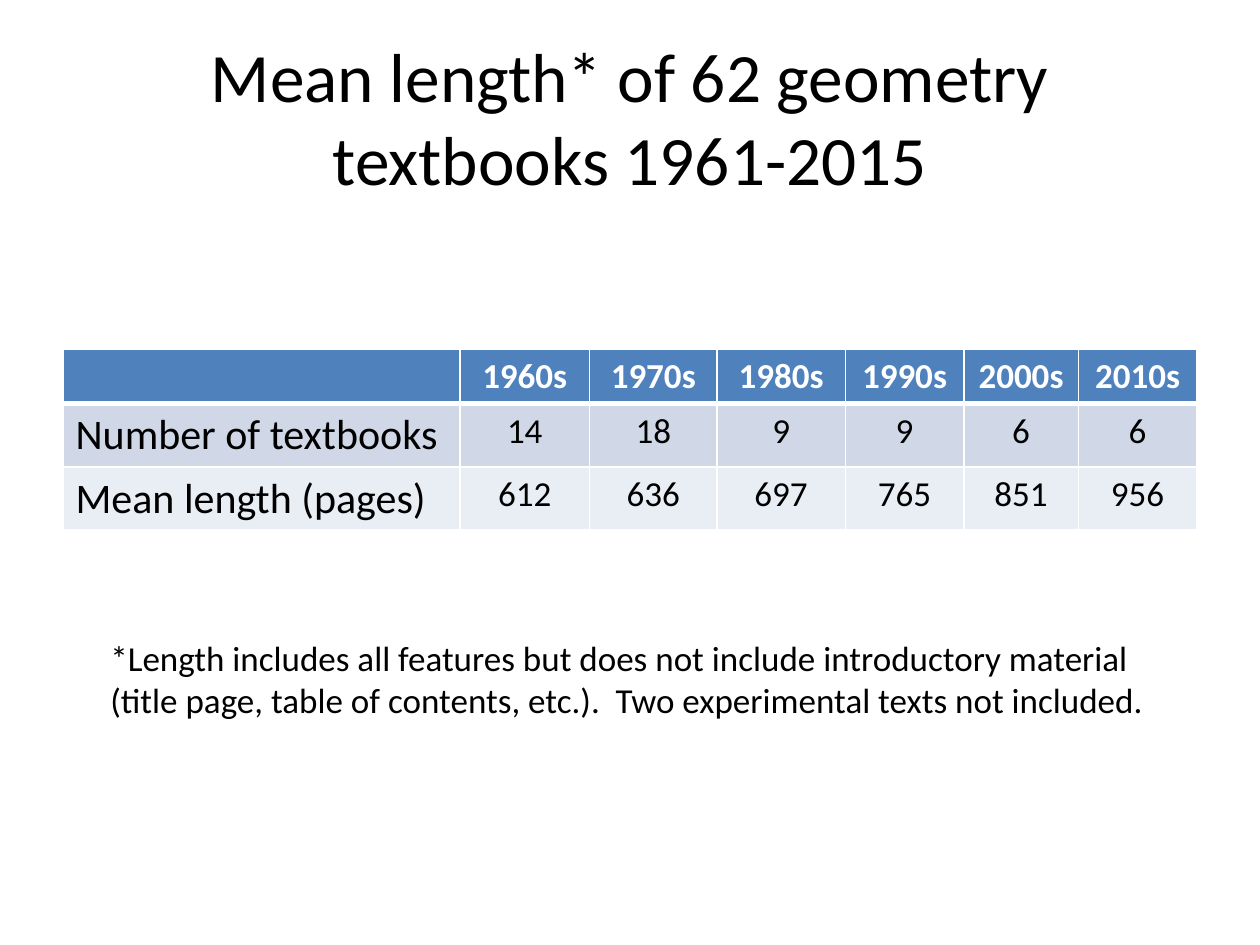
from lxml.etree import SubElement
from pptx import Presentation
from pptx.dml.color import RGBColor
from pptx.enum.text import MSO_ANCHOR as Anchor, PP_ALIGN as Align
from pptx.oxml.ns import qn
from pptx.util import Pt

FONT = "Calibri"
BLACK, WHITE = "000000", "FFFFFF"
ROW_FILLS = ["4F81BD", "D0D8E8", "E9EDF4"]
ROW_HEIGHTS = [31, 36, 36]
COLUMN_WIDTHS = [226.8, 74.2, 72.7, 73.4, 67.7, 65.5, 67.7]
TEXTBOOK_ROWS = [
    ["", "1960s", "1970s", "1980s", "1990s", "2000s", "2010s"],
    ["Number of textbooks", "14", "18", "9", "9", "6", "6"],
    ["Mean length (pages)", "612", "636", "697", "765", "851", "956"],
]


def color(hex_string):
    """Return the colour for a hex string."""
    return RGBColor.from_string(hex_string)


def write_text(text_frame, text, size=20, hex_color=BLACK, bold=False, align=Align.LEFT):
    """Write one formatted paragraph into a text frame."""
    paragraph = text_frame.paragraphs[0]
    paragraph.alignment = align
    run = paragraph.add_run()
    run.text = text
    run.font.name = FONT
    run.font.size = Pt(size)
    run.font.bold = bold
    run.font.color.rgb = color(hex_color)


def add_text(slide, left, top, width, height, text, anchor=Anchor.TOP, **text_format):
    """Add a wrapping text box."""
    shape = slide.shapes.add_textbox(Pt(left), Pt(top), Pt(width), Pt(height))
    shape.text_frame.word_wrap = True
    shape.text_frame.vertical_anchor = anchor
    write_text(shape.text_frame, text, **text_format)


def set_borders(cell, hex_color, **widths):
    """Give a cell solid borders, with a width for each of L, R, T and B."""
    properties = cell._tc.get_or_add_tcPr()
    for side, width in widths.items():
        line = SubElement(properties, qn(f"a:ln{side}"), w=str(Pt(width)))
        fill = SubElement(line, qn("a:solidFill"))
        SubElement(fill, qn("a:srgbClr"), val=hex_color)


def add_textbook_table(slide, left, top):
    """Add the table of textbook counts and lengths by decade."""
    frame = slide.shapes.add_table(
        len(ROW_HEIGHTS), len(COLUMN_WIDTHS), Pt(left), Pt(top),
        Pt(sum(COLUMN_WIDTHS)), Pt(sum(ROW_HEIGHTS)))
    table = frame.table
    for column, width in zip(table.columns, COLUMN_WIDTHS):
        column.width = Pt(width)
    for row_index, values in enumerate(TEXTBOOK_ROWS):
        table.rows[row_index].height = Pt(ROW_HEIGHTS[row_index])
        is_header = row_index == 0
        for column_index, value in enumerate(values):
            cell = table.cell(row_index, column_index)
            set_borders(cell, WHITE, L=1, R=1, T=3 if row_index == 1 else 1,
                        B=3 if is_header else 1)
            cell.fill.solid()
            cell.fill.fore_color.rgb = color(ROW_FILLS[row_index])
            is_label = column_index == 0
            if value:
                write_text(cell.text_frame, value, size=24 if is_label else 20,
                           hex_color=WHITE if is_header else BLACK, bold=is_header,
                           align=Align.LEFT if is_label else Align.CENTER)


def main():
    """Build and save the slide."""
    presentation = Presentation()
    presentation.slide_width, presentation.slide_height = Pt(720), Pt(540)
    slide = presentation.slides.add_slide(presentation.slide_layouts[6])
    add_text(slide, 36, 21.6, 648, 90, "Mean length* of 62 geometry textbooks 1961-2015",
             anchor=Anchor.MIDDLE, size=39.6, align=Align.CENTER)
    add_textbook_table(slide, 36, 199.5)
    add_text(slide, 56, 360, 628, 55.7,
             "*Length includes all features but does not include introductory material "
             "(title page, table of contents, etc.).  Two experimental texts not included.")
    presentation.save("out.pptx")


if __name__ == "__main__":
    main()
